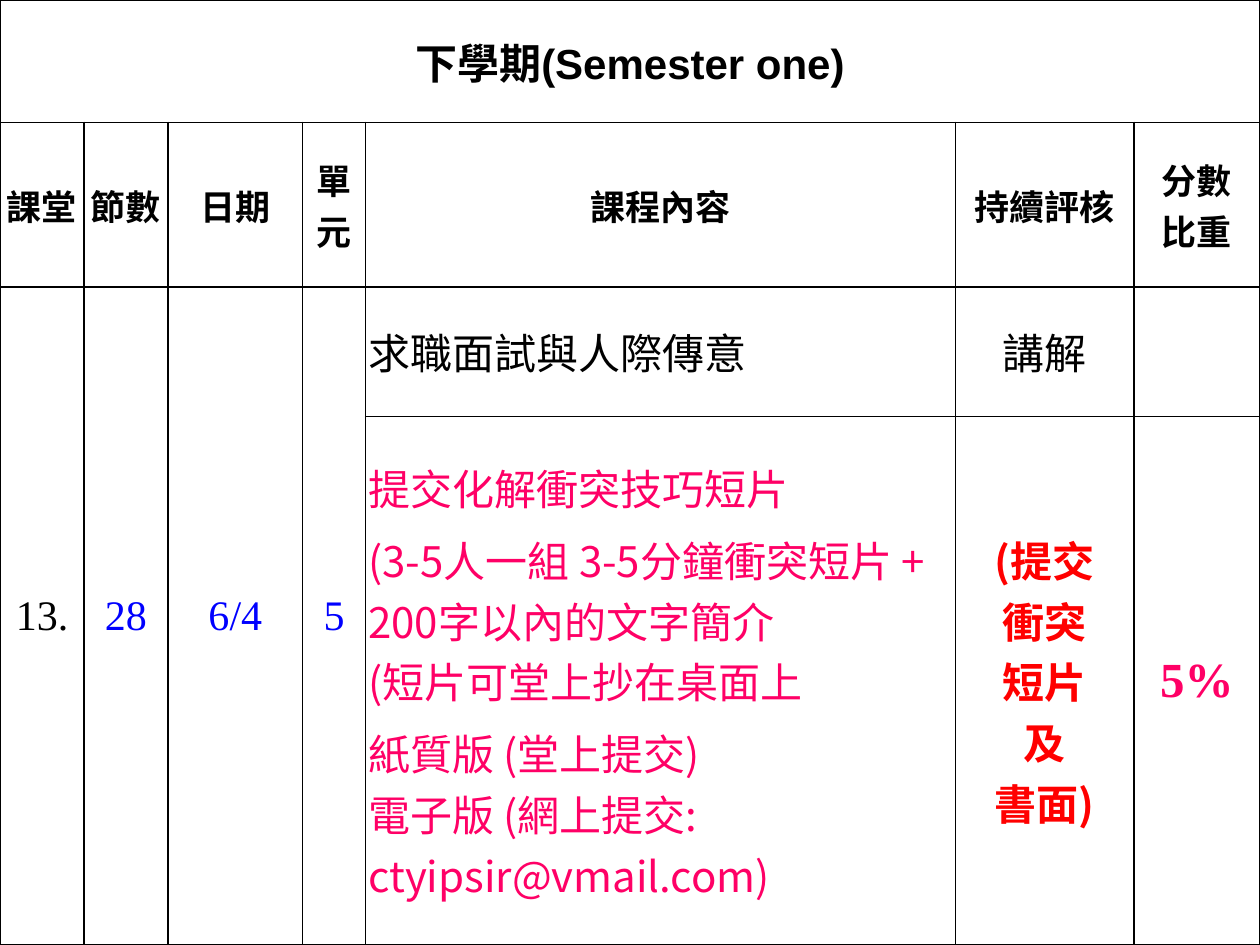
from itertools import groupby

from lxml import etree
from pptx import Presentation
from pptx.dml.color import RGBColor
from pptx.enum import text
from pptx.oxml import ns
from pptx.util import Pt

THEME = {
    "black": "000000", "blue": "0000FF", "red": "FF0000", "pink": "FF0066",
    "arial": "Arial", "serif": "Times New Roman",
    "mono": "Courier New", "sans": "Noto Sans CJK SC",
    "header": 20, "body": 24, "score": 28, "border": 1,
}

COLUMN_WIDTHS = [48, 48, 77, 36, 337, 102, 72]
ROW_HEIGHTS = [70, 94, 74, 302]
MERGES = [((0, 0), (0, 6))] + [((2, column), (3, column)) for column in range(4)]

TITLE = "下學期(Semester one)"
HEADERS = ["課堂", "節數", "日期", "單元", "課程內容", "持續評核", "分數\n比重"]
LESSON = [("13.", "black"), ("28", "blue"), ("6/4", "blue"), ("5", "blue")]
TOPIC = "求職面試與人際傳意"
METHOD = "講解"
TASK = [
    "提交化解衝突技巧短片",
    "(3-5人一組 3-5分鐘衝突短片 + \n200字以內的文字簡介\n(短片可堂上抄在桌面上",
    "紙質版 (堂上提交)\n電子版 (網上提交: ctyipsir@vmail.com)",
]
ASSESSMENT = "(提交\n衝突\n短片\n及\n書面)"
WEIGHT = "5%"


def content():
    heading = {"bold": True, "latin": "arial", "chinese": "arial"}
    strong = {"bold": True, "latin": "sans"}
    yield 0, 0, [TITLE], heading
    for column, header in enumerate(HEADERS):
        font = "serif" if column == 1 else "arial"
        yield 1, column, [header], {**heading, "size": "header", "chinese": font}
    for column, (value, color) in enumerate(LESSON):
        yield 2, column, [value], {"color": color}
    yield 2, 4, [TOPIC], {"chinese": "mono", "align": "LEFT"}
    yield 2, 5, [METHOD], {}
    yield 3, 4, TASK, {"latin": "sans", "chinese": "mono", "color": "pink",
                       "align": "LEFT", "space_after": 6}
    yield 3, 5, [ASSESSMENT], {**strong, "color": "red"}
    yield 3, 6, [WEIGHT], {"bold": True, "color": "pink", "size": "score"}


def set_all(target, values):
    for name, value in values.items():
        setattr(target, name, value)


def add_line(paragraph, line, style):
    for is_latin, characters in groupby(line, str.isascii):
        run = paragraph.add_run()
        run.text = "".join(characters)
        font = style["latin"] if is_latin else style["chinese"]
        set_all(run.font, {"name": THEME[font], "size": Pt(THEME[style["size"]]),
                           "bold": style["bold"]})
        run.font.color.rgb = RGBColor.from_string(THEME[style["color"]])


def write_cell(cell, paragraphs, changes):
    style = {"latin": "serif", "chinese": "serif", "color": "black", "size": "body",
             "bold": False, "align": "CENTER", "space_after": 0, **changes}
    for index, content_text in enumerate(paragraphs):
        frame = cell.text_frame
        paragraph = frame.add_paragraph() if index else frame.paragraphs[0]
        set_all(paragraph, {"alignment": getattr(text.PP_ALIGN, style["align"]),
                            "space_after": Pt(style["space_after"])})
        for number, line in enumerate(content_text.split("\n")):
            if number:
                paragraph.add_line_break()
            add_line(paragraph, line, style)


def format_cell(cell):
    set_all(cell, {"margin_left": Pt(1.5), "margin_right": Pt(1.5),
                   "margin_top": 0, "margin_bottom": 0,
                   "vertical_anchor": text.MSO_ANCHOR.MIDDLE})
    properties = cell._tc.get_or_add_tcPr()
    for side in ("lnL", "lnR", "lnT", "lnB"):
        border = etree.SubElement(properties, ns.qn(f"a:{side}"), w=str(Pt(THEME["border"])))
        fill = etree.SubElement(border, ns.qn("a:solidFill"))
        etree.SubElement(fill, ns.qn("a:srgbClr"), val=THEME["black"])
    cell.fill.background()


def main():
    presentation = Presentation()
    set_all(presentation, {"slide_width": Pt(720), "slide_height": Pt(540)})
    slide = presentation.slides.add_slide(presentation.slide_layouts[6])
    table = slide.shapes.add_table(len(ROW_HEIGHTS), len(COLUMN_WIDTHS), 0, 0,
                                   Pt(sum(COLUMN_WIDTHS)), Pt(sum(ROW_HEIGHTS))).table
    set_all(table, {"first_row": False, "horz_banding": False})
    for column, width in zip(table.columns, COLUMN_WIDTHS):
        column.width = Pt(width)
    for row, height in zip(table.rows, ROW_HEIGHTS):
        row.height = Pt(height)
    for cell in table.iter_cells():
        format_cell(cell)
    for first, last in MERGES:
        table.cell(*first).merge(table.cell(*last))
    for row, column, paragraphs, changes in content():
        write_cell(table.cell(row, column), paragraphs, changes)
    presentation.save("out.pptx")


if __name__ == "__main__":
    main()
